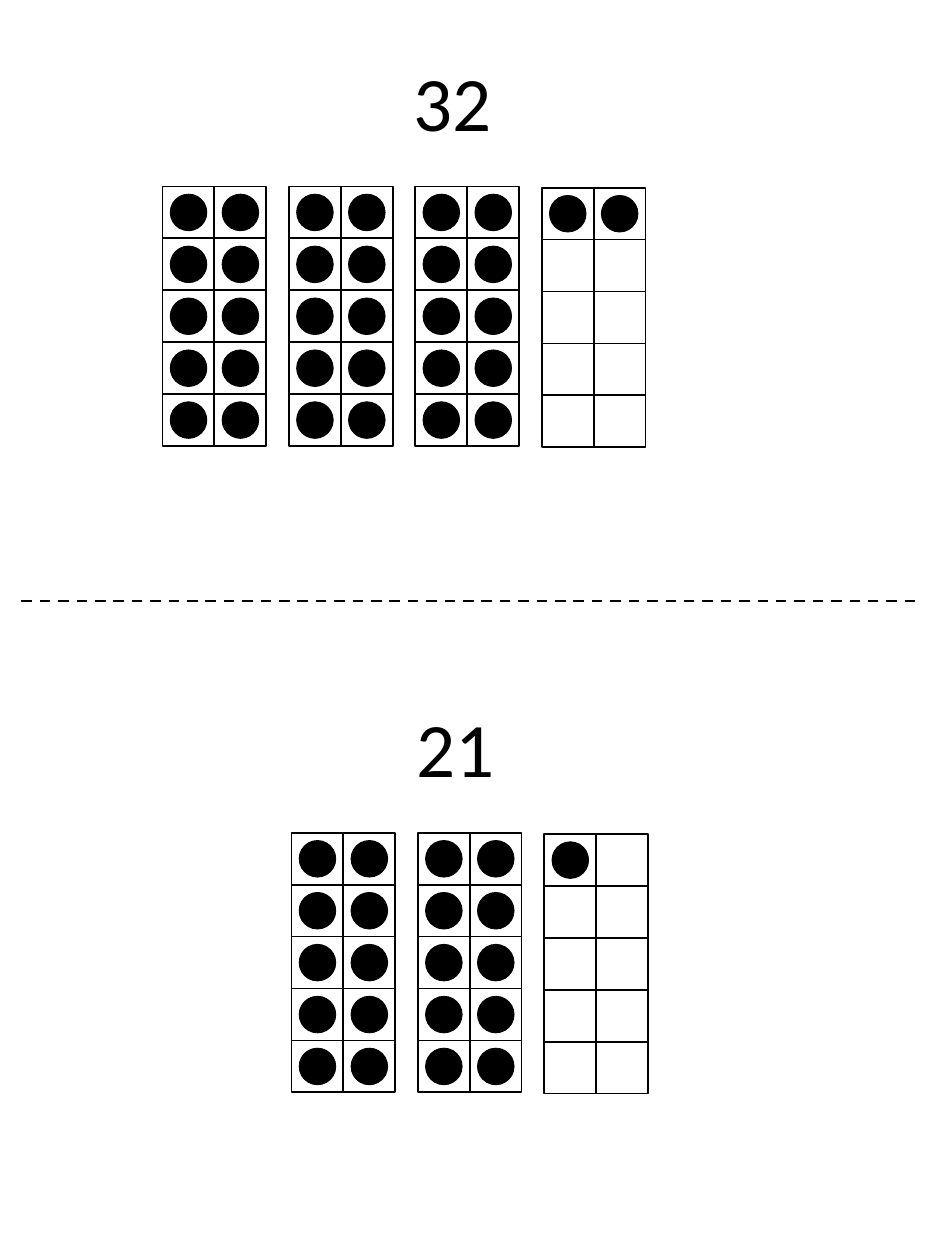
from lxml import etree
from pptx import Presentation
from pptx import util as u
from pptx.dml.color import RGBColor
from pptx.enum import dml, shapes, text
from pptx.oxml import ns

WIDTH, HEIGHT = 7.5, 10
ROWS, COLUMNS = 5, 2
CELL = 2.06 / ROWS
DOT = 0.29
FRAME_PITCH = 3.01 / 3
FRAME_SLOTS = 4
PARTIAL_DROP = 0.01
BLACK, WHITE = "000000", "FFFFFF"


def color(hex_string):
    """Return the colour for a hex string."""
    return RGBColor.from_string(hex_string)


def add_filled(slide, kind, left, top, size, fill, line_width):
    """Add a square-bounded shape with a black outline."""
    shape = slide.shapes.add_shape(kind, *map(u.Inches, (left, top, size, size)))
    shape.shadow.inherit = False
    shape.fill.solid()
    shape.fill.fore_color.rgb = color(fill)
    shape.line.color.rgb = color(BLACK)
    shape.line.width = u.Pt(line_width)


def add_ten_frame(slide, left, top, count):
    """Draw a ten frame with its first cells dotted, row by row."""
    inset = (CELL - DOT) / 2
    for index in range(ROWS * COLUMNS):
        row, column = divmod(index, COLUMNS)
        x, y = left + column * CELL, top + row * CELL
        add_filled(slide, shapes.MSO_SHAPE.RECTANGLE, x, y, CELL, WHITE, 1)
        if index < count:
            add_filled(slide, shapes.MSO_SHAPE.OVAL, x + inset, y + inset, DOT, BLACK, 0.5)


def format_number(shape, number, left, top):
    """Place and style the large numeral of a card."""
    shape.left, shape.top, shape.width, shape.height = map(u.Inches, (left, top, 1.65, 1))
    frame = shape.text_frame
    frame.text = str(number)
    frame.word_wrap = True
    frame.auto_size = text.MSO_AUTO_SIZE.NONE
    frame.vertical_anchor = text.MSO_ANCHOR.MIDDLE
    paragraph = frame.paragraphs[0]
    paragraph.alignment = text.PP_ALIGN.CENTER
    font = paragraph.runs[0].font
    font.name, font.size = "Calibri", u.Pt(44)
    font.color.rgb = color(BLACK)


def add_card(slide, shape, number, left, top):
    """Fill one card: numeral above right-aligned ten frames."""
    format_number(shape, number, left + 1.48, top)
    tens, ones = divmod(number, 10)
    first_slot = FRAME_SLOTS - tens - 1
    for index, count in enumerate([10] * tens + [ones]):
        drop = PARTIAL_DROP if count < 10 else 0
        frame_left = left + (first_slot + index) * FRAME_PITCH
        add_ten_frame(slide, frame_left, top + 1.18 + drop, count)


def add_cut_line(slide):
    """Add the dashed line between the two cards."""
    y = u.Inches(HEIGHT * 0.477)
    line = slide.shapes.add_connector(
        shapes.MSO_CONNECTOR.STRAIGHT, u.Inches(0.17), y, u.Inches(7.29), y)
    line.line.color.rgb = color(BLACK)
    line.line.width = u.Pt(1.5)
    line.line.dash_style = dml.MSO_LINE.DASH
    etree.SubElement(line._element.spPr, ns.qn("a:effectLst"))


def main():
    """Build the sheet with two number cards."""
    presentation = Presentation()
    presentation.slide_width = u.Inches(WIDTH)
    presentation.slide_height = u.Inches(HEIGHT)
    slide = presentation.slides.add_slide(presentation.slide_layouts.get_by_name("Title Only"))
    add_cut_line(slide)
    add_card(slide, slide.shapes.title, 32, 1.29, 0.3)
    add_card(slide, slide.shapes.add_textbox(0, 0, 0, 0), 21, 1.31, 5.43)
    presentation.save("out.pptx")


if __name__ == "__main__":
    main()
